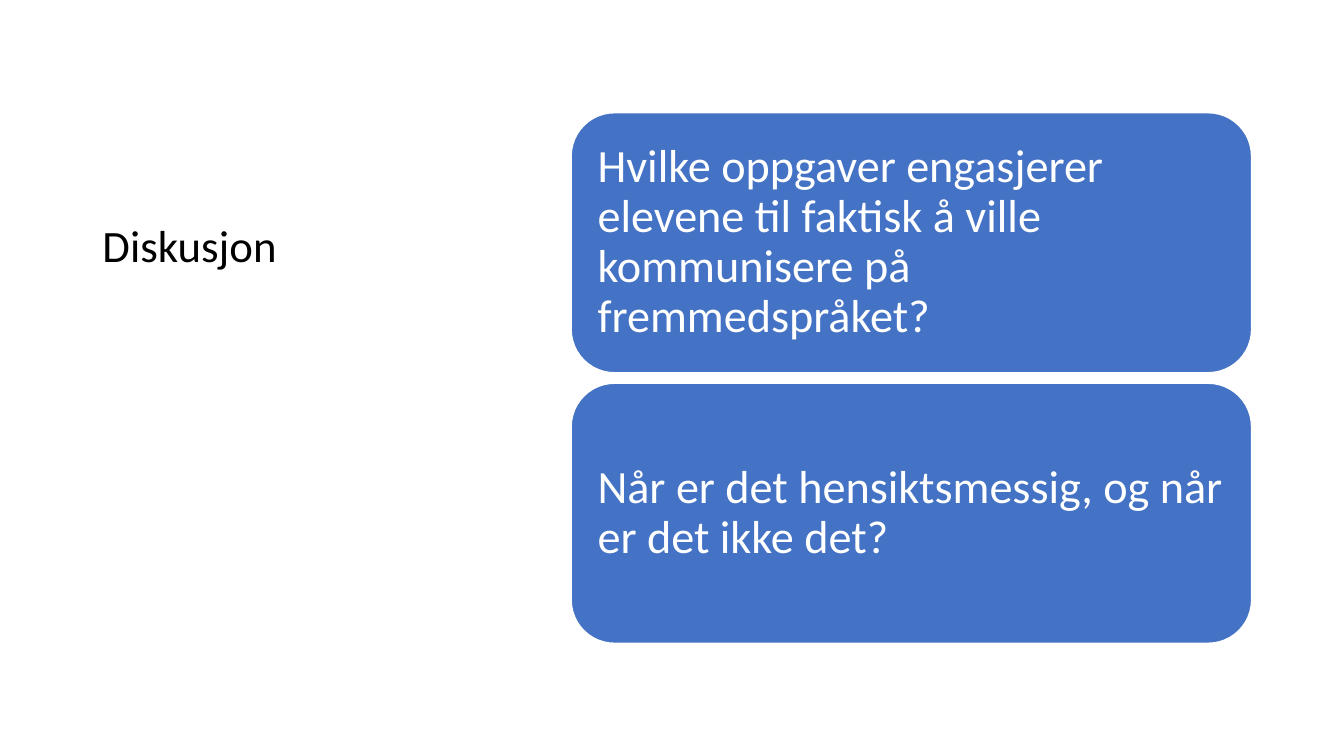
from pptx import Presentation
from pptx.dml.color import RGBColor
from pptx.enum.shapes import MSO_SHAPE
from pptx.enum.text import MSO_ANCHOR, PP_ALIGN
from pptx.util import Pt

ROUNDED = MSO_SHAPE.ROUNDED_RECTANGLE
LEFT = PP_ALIGN.LEFT
BOTTOM, MIDDLE = MSO_ANCHOR.BOTTOM, MSO_ANCHOR.MIDDLE

FONT = "Calibri"
COLORS = {"card": "4472C4", "white": "FFFFFF", "black": "000000"}
QUESTIONS = [
    "Hvilke oppgaver engasjerer elevene til faktisk å ville "
    "kommunisere på fremmedspråket?",
    "Når er det hensiktsmessig, og når er det ikke det?",
]


def rgb(name):
    return RGBColor.from_string(COLORS[name])


def write(tf, text, size, color, anchor):
    tf.word_wrap = True
    tf.vertical_anchor = anchor
    p = tf.paragraphs[0]
    p.alignment = LEFT
    p.line_spacing = 0.9
    r = p.add_run()
    r.text = text
    r.font.name = FONT
    r.font.size = Pt(size)
    r.font.color.rgb = rgb(color)


def add_title(s, text, x, y, w, h):
    sp = s.shapes.title
    sp.left, sp.top, sp.width, sp.height = Pt(x), Pt(y), Pt(w), Pt(h)
    write(sp.text_frame, text, 32, "black", BOTTOM)


def add_questions(s, questions, x, y, w, h, gap=7.5):
    # Equal cards stacked to fill the box
    card_h = (h - gap * (len(questions) - 1)) / len(questions)
    for i, question in enumerate(questions):
        top = y + i * (card_h + gap)
        sp = s.shapes.add_shape(ROUNDED, Pt(x), Pt(top), Pt(w), Pt(card_h))
        sp.shadow.inherit = False
        sp.fill.solid()
        sp.fill.fore_color.rgb = rgb("card")
        sp.line.color.rgb = rgb("white")
        sp.line.width = Pt(1)
        tf = sp.text_frame
        tf.margin_left = tf.margin_right = Pt(9.8)
        tf.margin_top = tf.margin_bottom = Pt(9.8)
        write(tf, question, 33, "white", MIDDLE)


def main():
    prs = Presentation()
    prs.slide_width, prs.slide_height = Pt(960), Pt(540)
    s = prs.slides.add_slide(prs.slide_layouts[5])

    # Heading on the left, questions on the right
    add_title(s, "Diskusjon", 66, 36, 310, 162)
    add_questions(s, QUESTIONS, 408, 80.5, 486, 379)

    prs.save("out.pptx")


if __name__ == "__main__":
    main()
